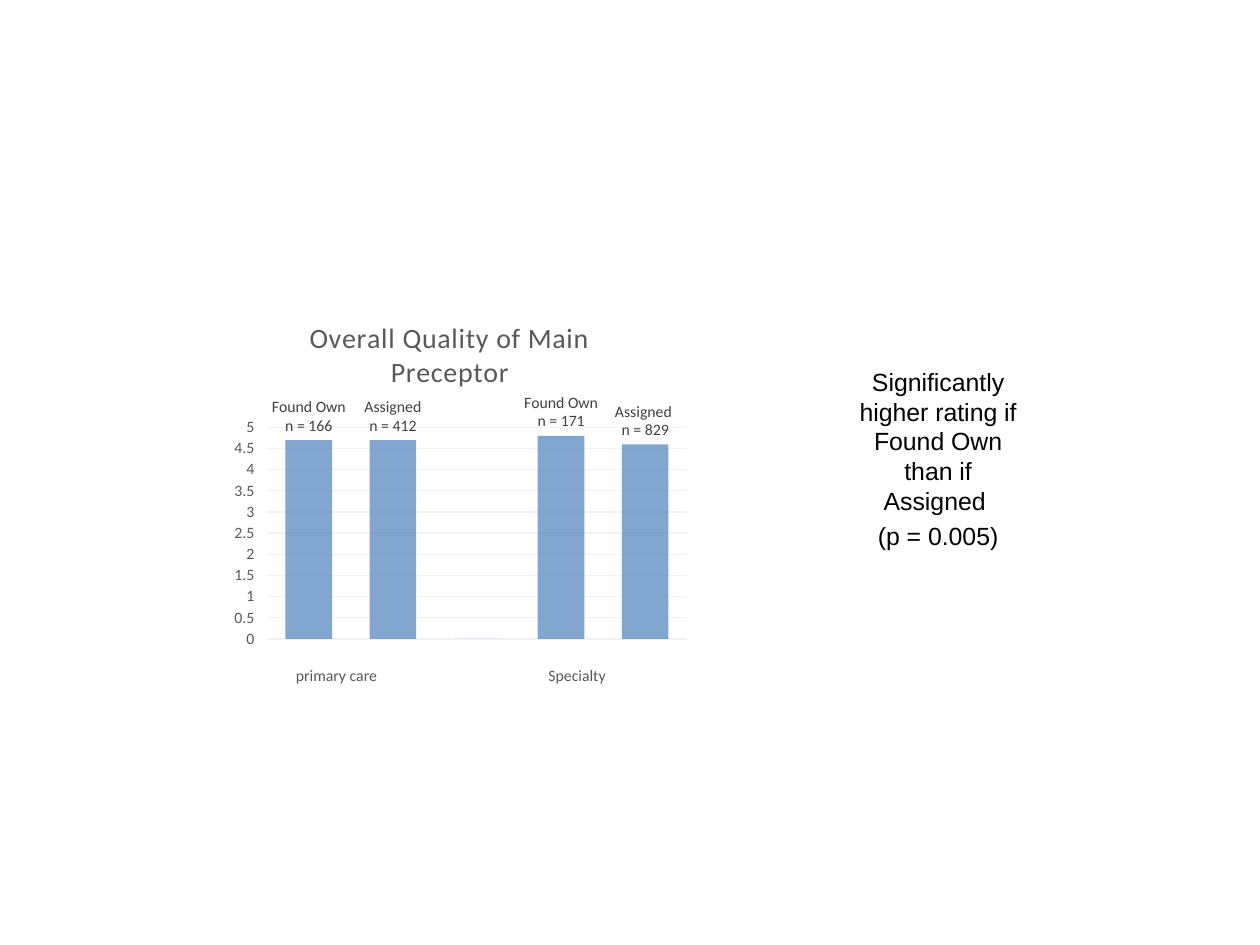
import dataclasses
from typing import Any

import lxml.etree
import pptx
import pptx.chart.data
import pptx.dml.color
import pptx.enum.chart
import pptx.enum.text
import pptx.oxml
import pptx.oxml.ns
import pptx.util

RGB = pptx.dml.color.RGBColor
BLACK = RGB(0x00, 0x00, 0x00)
DARK_GREY = RGB(0x40, 0x40, 0x40)
GREY = RGB(0x59, 0x59, 0x59)
PALE_GREY = RGB(0xF2, 0xF2, 0xF2)
BLUE = RGB(0x4F, 0x81, 0xBD)

WIDTH, HEIGHT = pptx.util.Inches(10), pptx.util.Inches(7.5)
Pt = pptx.util.Pt
qn = pptx.oxml.ns.qn


@dataclasses.dataclass(frozen=True)
class Area:
    """Left, top, width and height as percentages of the slide."""

    left: float
    top: float
    width: float
    height: float

    def lengths(self) -> list[int]:
        shares = (self.left, self.top, self.width, self.height)
        return [int(side * share / 100)
                for side, share in zip((WIDTH, HEIGHT) * 2, shares)]


@dataclasses.dataclass(frozen=True)
class Note:
    area: Area
    lines: tuple[str, ...]
    font: dict[str, Any]


@dataclasses.dataclass(frozen=True)
class Bar:
    rating: float
    label: str = ""


NOTE_FONT = {"name": "Arial", "size": Pt(14.2), "color": BLACK}
TITLE_FONT = {"name": "Calibri", "size": Pt(16), "bold": False, "color": GREY}
AXIS_FONT = {"name": "Calibri", "size": Pt(9), "color": GREY}
LABEL_FONT = AXIS_FONT | {"color": DARK_GREY}

CHART_AREA = Area(17.8, 33.2, 37.5, 41.47)
BARS = (
    Bar(4.7, "Found Own\nn = 166"),
    Bar(4.7, "Assigned\nn = 412"),
    Bar(0),
    Bar(4.8, "Found Own\nn = 171"),
    Bar(4.6, "Assigned \nn = 829"),
)
NOTES = (
    Note(Area(66.7, 38.13, 15.5, 31.6),
         ("Significantly higher rating if Found Own than if Assigned ",
          "(p = 0.005)"), NOTE_FONT),
    Note(Area(21.7, 69.8, 10, 4), ("primary care",), AXIS_FONT),
    Note(Area(40.8, 69.8, 10, 4), ("Specialty",), AXIS_FONT),
)


def set_font(font: Any, values: dict[str, Any]) -> None:
    for name, value in values.items():
        if name == "color":
            font.color.rgb = value
        else:
            setattr(font, name, value)


def add_note(s: Any, note: Note) -> None:
    tf = s.shapes.add_textbox(*note.area.lengths()).text_frame
    tf.word_wrap = True
    for i, line in enumerate(note.lines):
        p = tf.paragraphs[0] if i == 0 else tf.add_paragraph()
        p.alignment = pptx.enum.text.PP_ALIGN.CENTER
        if i:
            p.space_before = Pt(2.8)
        r = p.add_run()
        r.text = line
        set_font(r.font, note.font)


def manual_layout(**values: Any) -> Any:
    """Return a chart layout element; lengths are shares of the chart."""
    layout = pptx.oxml.parse_xml(
        f"<c:layout {pptx.oxml.ns.nsdecls('c')}><c:manualLayout/></c:layout>")
    for name, value in values.items():
        lxml.etree.SubElement(layout[0], qn(f"c:{name}"), val=str(value))
    return layout


def place_plot(chart: Any) -> None:
    plot_area = chart.plots[0]._element.getparent()
    for old in plot_area.findall(qn("c:layout")):
        plot_area.remove(old)
    plot_area.insert(0, manual_layout(
        layoutTarget="inner", xMode="edge", yMode="edge",
        x=0.09, y=0.29, w=0.89, h=0.54))


def add_title(chart: Any, text: str) -> None:
    title = chart.chart_title
    tf = title.text_frame
    tf.text = text
    r = tf.paragraphs[0].runs[0]
    set_font(r.font, TITLE_FONT)
    r._r.get_or_add_rPr().set("spc", "50")
    for old in title._element.findall(qn("c:layout")):
        title._element.remove(old)
    title._element.find(qn("c:tx")).addnext(
        manual_layout(xMode="edge", yMode="edge", x=0.17, y=0))


def format_axes(chart: Any) -> None:
    chart.category_axis.visible = False
    axis = chart.value_axis
    axis.minimum_scale, axis.maximum_scale, axis.major_unit = 0, 5, 0.5
    axis.major_tick_mark = pptx.enum.chart.XL_TICK_MARK.OUTSIDE
    axis.format.line.fill.background()
    axis.tick_labels.number_format = "General"
    axis.tick_labels.number_format_is_linked = False
    set_font(axis.tick_labels.font, AXIS_FONT)
    grid = axis.major_gridlines.format.line
    grid.color.rgb, grid.width = PALE_GREY, Pt(0.75)


def format_bars(chart: Any) -> None:
    plot = chart.plots[0]
    plot.gap_width, plot.overlap, plot.vary_by_categories = 80, 25, False
    series = plot.series[0]
    fill = series.format.fill
    fill.solid()
    fill.fore_color.rgb = BLUE
    color = series._element.find(f".//{qn('a:srgbClr')}")
    lxml.etree.SubElement(color, qn("a:alpha"), val="70000")
    for i, bar in enumerate(BARS):
        if not bar.label:
            continue
        label = series.points[i].data_label
        label.text_frame.text = bar.label
        label.position = pptx.enum.chart.XL_LABEL_POSITION.OUTSIDE_END
        for p in label.text_frame.paragraphs:
            for r in p.runs:
                set_font(r.font, LABEL_FONT)


def add_rating_chart(s: Any) -> None:
    data = pptx.chart.data.CategoryChartData()
    data.categories = [str(i + 1) for i in range(len(BARS))]
    data.add_series("Series 1", [bar.rating for bar in BARS])
    chart = s.shapes.add_chart(
        pptx.enum.chart.XL_CHART_TYPE.COLUMN_CLUSTERED,
        *CHART_AREA.lengths(), data).chart
    chart.has_legend = False
    set_font(chart.font, {"name": "Calibri", "size": Pt(10), "color": BLACK})
    add_title(chart, "Overall Quality of Main Preceptor")
    format_axes(chart)
    format_bars(chart)
    place_plot(chart)


def main() -> None:
    prs = pptx.Presentation()
    prs.slide_width, prs.slide_height = WIDTH, HEIGHT
    s = prs.slides.add_slide(prs.slide_layouts[6])
    add_rating_chart(s)
    for note in NOTES:
        add_note(s, note)
    prs.save("out.pptx")


if __name__ == "__main__":
    main()
